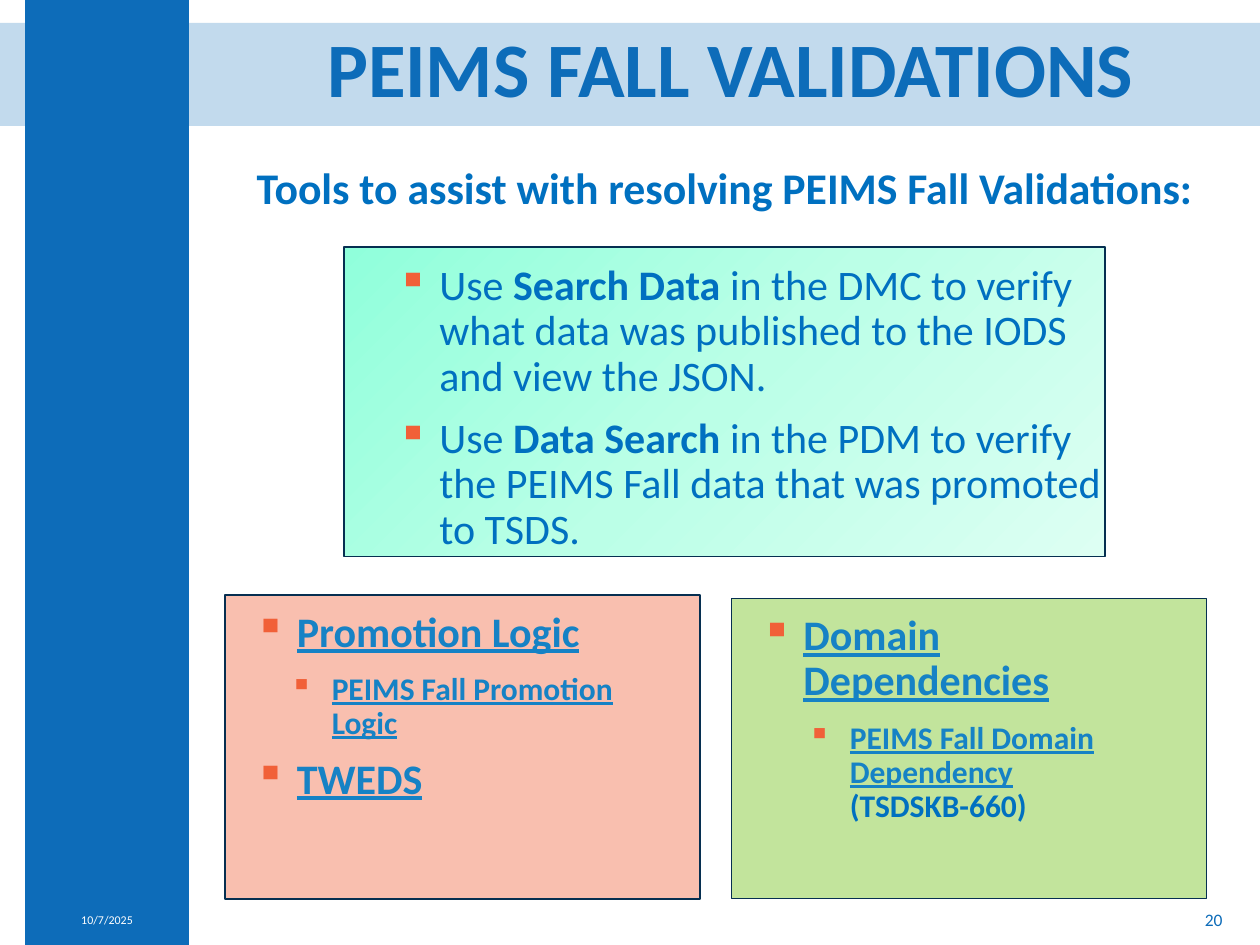
from lxml.etree import SubElement
from pptx import Presentation
from pptx.dml.color import RGBColor
from pptx.enum.shapes import MSO_SHAPE
from pptx.enum.text import MSO_ANCHOR, PP_ALIGN
from pptx.oxml import parse_xml
from pptx.oxml.ns import nsdecls, qn
from pptx.util import Pt

BLUE, TEXT, LINK = "0D6CB9", "0070C0", "1682C5"
ORANGE, NAVY, WHITE = "F16038", "062F51", "FFFFFF"
PLAIN = {"size": Pt(24), "color": TEXT}
BOLD = {**PLAIN, "bold": True}
LINKED = {"size": Pt(24), "color": LINK, "bold": True, "underline": True}
SUBLINK = {**LINKED, "size": Pt(18)}
SUBNOTE = {"size": Pt(18), "color": TEXT, "bold": True}


def rgb(value):
    return RGBColor.from_string(value)


def add_rect(s, box, fill=None, line=None):
    sp = s.shapes.add_shape(MSO_SHAPE.RECTANGLE, *map(Pt, box))
    sp.shadow.inherit = False
    if fill:
        sp.fill.solid()
        sp.fill.fore_color.rgb = rgb(fill)
    if line:
        sp.line.color.rgb = rgb(line)
        sp.line.width = Pt(1)
    else:
        sp.line.fill.background()
    return sp


def add_runs(p, runs):
    for text, style in runs:
        r = p.add_run()
        r.text = text
        r.font.name = "Calibri"
        for name, value in style.items():
            if name == "color":
                r.font.color.rgb = rgb(value)
            else:
                setattr(r.font, name, value)


def add_text(s, box, **frame):
    tf = s.shapes.add_textbox(*map(Pt, box)).text_frame
    tf.word_wrap = True
    for name, value in frame.items():
        setattr(tf, name, value)
    return tf


def add_label(s, box, text, style, align=PP_ALIGN.CENTER, **frame):
    """Add a single line of text."""
    p = add_text(s, box, **frame).paragraphs[0]
    p.alignment = align
    add_runs(p, [(text, style)])
    return p


def set_bullet(p, indent):
    pPr = p._p.get_or_add_pPr()
    pPr.set("marL", str(Pt(indent)))
    pPr.set("indent", str(Pt(-24)))
    color = SubElement(pPr, qn("a:buClr"))
    SubElement(color, qn("a:srgbClr"), val=ORANGE)
    SubElement(pPr, qn("a:buChar"), char="▪")


def add_bullets(s, box, items):
    """Add bulleted paragraphs given as (indent, runs)."""
    tf = add_text(s, box)
    for i, (indent, runs) in enumerate(items):
        p = tf.add_paragraph() if i else tf.paragraphs[0]
        set_bullet(p, indent)
        p.line_spacing = 0.9
        p.space_before = Pt(2.8 if i else 0)
        p.space_after = Pt(6.8)
        add_runs(p, runs)


def set_gradient(sp, stops, angle):
    marks = "".join(
        f'<a:gs pos="{pos * 1000}"><a:srgbClr val="{color}"/></a:gs>'
        for pos, color in stops)
    grad = parse_xml(
        f'<a:gradFill {nsdecls("a")} rotWithShape="1"><a:gsLst>{marks}</a:gsLst>'
        f'<a:lin ang="{angle * 60000}" scaled="0"/></a:gradFill>')
    sp._element.spPr.find(qn("a:prstGeom")).addnext(grad)


def add_frame(s, width, height):
    """Add the title band, the side bar, the date and the slide number."""
    band = add_rect(s, (0, 13, width, 59), BLUE)
    color = band._element.spPr.find(f'{qn("a:solidFill")}/{qn("a:srgbClr")}')
    SubElement(color, qn("a:alpha"), val="25000")
    add_rect(s, (14.4, 0, 93.6, height), BLUE)
    middle = {"vertical_anchor": MSO_ANCHOR.MIDDLE}
    add_label(s, (14.4, height - 28.8, 93.6, 28.8), "10/7/2025",
              {"size": Pt(6.8), "color": WHITE}, **middle)
    add_label(s, (543.6, height - 28.8, 162, 28.8), "20",
              {"size": Pt(10), "color": BLUE}, PP_ALIGN.RIGHT, **middle)


def add_heading(s, box):
    p = add_label(s, box, "PEIMS FALL VALIDATIONS",
                  {"size": Pt(44), "color": BLUE, "bold": True},
                  vertical_anchor=MSO_ANCHOR.MIDDLE)
    p.line_spacing = 0.9


def add_search_panel(s, box):
    x, y, w, h = box
    sp = add_rect(s, box, line=NAVY)
    set_gradient(sp, [(0, "90FFDB"), (50, "BBFFE7"), (100, "DDFFF3")], 45)
    add_bullets(s, (x, y + 6.5, w + 8, h - 6.5), [
        (47.5, [("Use", PLAIN), (" Search Data ", BOLD),
                ("in the DMC to verify what data was published to the IODS "
                 "and view the JSON.", PLAIN)]),
        (47.5, [("Use", PLAIN), (" Data Search ", BOLD),
                ("in the PDM to verify the PEIMS Fall data that was promoted "
                 "to TSDS.", PLAIN)]),
    ])


def add_link_panel(s, box, fill, items):
    x, y, w, h = box
    add_rect(s, box, fill, NAVY)
    add_bullets(s, (x - 13.5, y + 5.5, w - 4.5, h - 5.5), items)


def main():
    prs = Presentation()
    prs.slide_width, prs.slide_height = Pt(720), Pt(540)
    s = prs.slides.add_slide(prs.slide_layouts[6])
    add_frame(s, 720, 540)
    add_heading(s, (136.8, 12.2, 561.6, 59))
    add_label(s, (108, 88.5, 612, 37.5),
              "Tools to assist with resolving PEIMS Fall Validations:",
              {"size": Pt(25), "color": TEXT, "bold": True})
    add_search_panel(s, (196.5, 141, 435, 177))
    add_link_panel(s, (128.5, 340, 271.5, 174), "F9BFAF", [
        (47.5, [("Promotion Logic", LINKED)]),
        (67.5, [("PEIMS Fall Promotion Logic", SUBLINK)]),
        (47.5, [("TWEDS", LINKED)]),
    ])
    add_link_panel(s, (418, 342, 271.5, 171.5), "C2E49C", [
        (47.5, [("Domain Dependencies", LINKED)]),
        (74, [("PEIMS Fall Domain Dependency", SUBLINK),
              (" (TSDSKB-660)", SUBNOTE)]),
    ])
    prs.save("out.pptx")


if __name__ == "__main__":
    main()
